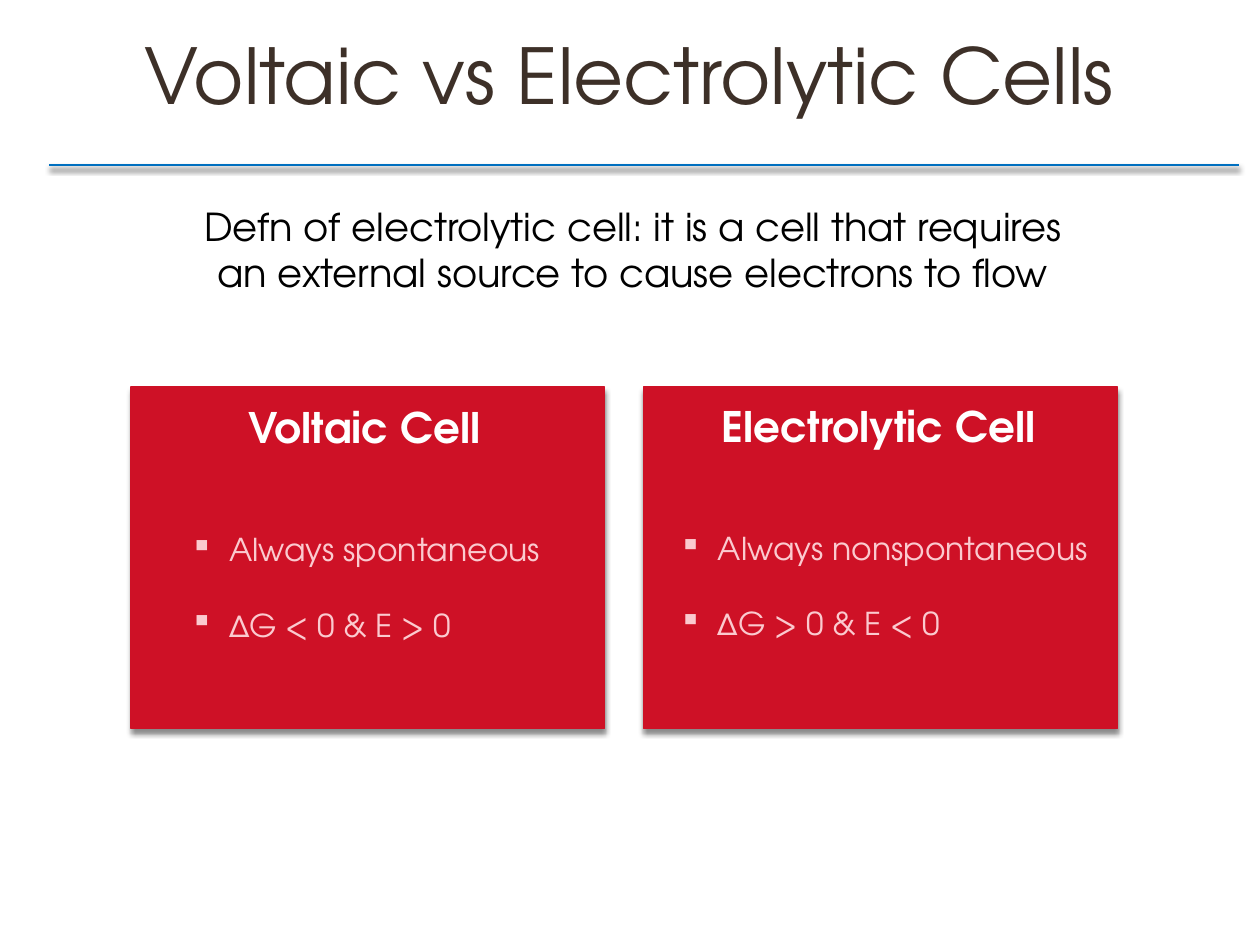
import pptx
import pptx.dml.color
import pptx.enum.shapes
import pptx.enum.text
import pptx.oxml
import pptx.oxml.ns
import pptx.util

Inches, Pt = pptx.util.Inches, pptx.util.Pt
RGBColor = pptx.dml.color.RGBColor
PP_ALIGN = pptx.enum.text.PP_ALIGN
MSO_AUTO_SIZE = pptx.enum.text.MSO_AUTO_SIZE

FONT = "TeX Gyre Adventor"
BROWN = RGBColor(0x3D, 0x30, 0x28)
BLUE = RGBColor(0x00, 0x70, 0xC0)
BLACK = RGBColor(0x00, 0x00, 0x00)
RED = RGBColor(0xCE, 0x11, 0x26)
WHITE = RGBColor(0xFF, 0xFF, 0xFF)
PINK = RGBColor(0xFB, 0xCA, 0xCF)


def format_runs(p, size, color, bold=False):
    """Apply the font to every run of a paragraph."""
    for r in p.runs:
        r.font.name = FONT
        r.font.size = Pt(size)
        r.font.bold = bold
        r.font.color.rgb = color


def add_shadow(s):
    """Give a shape or connector a soft shadow straight below it."""
    s._element.spPr.append(pptx.oxml.parse_xml(
        f'<a:effectLst {pptx.oxml.ns.nsdecls("a")}>'
        f'<a:outerShdw blurRad="{Pt(3)}" dist="{Pt(2.4)}" dir="5400000" rotWithShape="0">'
        '<a:srgbClr val="000000"><a:alpha val="45000"/></a:srgbClr>'
        '</a:outerShdw></a:effectLst>'))


def set_title(slide, text):
    """Place and format the title placeholder."""
    s = slide.shapes.title
    s.left, s.top, s.width, s.height = Inches(0), Inches(0.11), Inches(9.99), Inches(1.08)
    tf = s.text_frame
    tf.text = text
    tf.auto_size = MSO_AUTO_SIZE.NONE
    tf.vertical_anchor = pptx.enum.text.MSO_ANCHOR.MIDDLE
    p = tf.paragraphs[0]
    p.alignment = PP_ALIGN.CENTER
    p.line_spacing = 0.8
    format_runs(p, 44, BROWN)


def add_rule(slide):
    """Draw the line under the title."""
    s = slide.shapes.add_connector(
        pptx.enum.shapes.MSO_CONNECTOR.STRAIGHT,
        Inches(0.39), Inches(1.31), Inches(9.83), Inches(1.31))
    s.line.color.rgb = BLUE
    s.line.width = Pt(1.5)
    add_shadow(s)


def add_text(slide, box, text, size, color, bold=False, wrap=False):
    """Add a text box, one paragraph per line of text, and return its frame."""
    tf = slide.shapes.add_textbox(*map(Inches, box)).text_frame
    tf.text = text
    tf.word_wrap = wrap
    tf.auto_size = MSO_AUTO_SIZE.SHAPE_TO_FIT_TEXT
    for p in tf.paragraphs:
        format_runs(p, size, color, bold)
    return tf


def add_bullets(slide, box, items):
    """Add a list with square bullets, spaced one line apart."""
    tf = add_text(slide, box, "\n".join(items), 18, PINK)
    for i, p in enumerate(tf.paragraphs):
        pPr = p._p.get_or_add_pPr()
        pPr.set("marL", str(Inches(0.31)))
        pPr.set("indent", str(Inches(-0.31)))
        pPr.append(pptx.oxml.parse_xml(
            f'<a:buChar {pptx.oxml.ns.nsdecls("a")} char="▪"/>'))
        if i:
            p.space_before = Pt(21.4)


def add_card(slide, left, heading, heading_box, items, items_box):
    """Draw a red card with its heading and bullets."""
    s = slide.shapes.add_shape(
        pptx.enum.shapes.MSO_SHAPE.RECTANGLE,
        Inches(left), Inches(3.07), Inches(3.76), Inches(2.71))
    s.fill.solid()
    s.fill.fore_color.rgb = RED
    s.line.color.rgb = RED
    s.line.width = Pt(0.79)
    add_shadow(s)
    add_text(slide, heading_box, heading, 24, WHITE, bold=True)
    add_bullets(slide, items_box, items)


def main():
    """Build the slide and save it."""
    prs = pptx.Presentation()
    prs.slide_width, prs.slide_height = Inches(10), Inches(7.5)
    slide = prs.slides.add_slide(prs.slide_layouts[5])
    set_title(slide, "Voltaic vs Electrolytic Cells")
    add_rule(slide)
    tf = add_text(
        slide, (1.48, 1.56, 7.08, 0.84),
        "Defn of electrolytic cell: it is a cell that requires "
        "an external source to cause electrons to flow", 22, BLACK, wrap=True)
    tf.paragraphs[0].alignment = PP_ALIGN.CENTER
    add_card(slide, 1.04, "Voltaic Cell", (1.87, 3.14, 2.09, 0.5),
             ["Always spontaneous", "ΔG < 0 & E > 0"], (1.41, 4.16, 3.02, 1.01))
    add_card(slide, 5.11, "Electrolytic Cell", (5.63, 3.13, 2.72, 0.5),
             ["Always nonspontaneous", "ΔG > 0 & E < 0"], (5.29, 4.15, 3.5, 1.01))
    prs.save("out.pptx")


if __name__ == "__main__":
    main()
